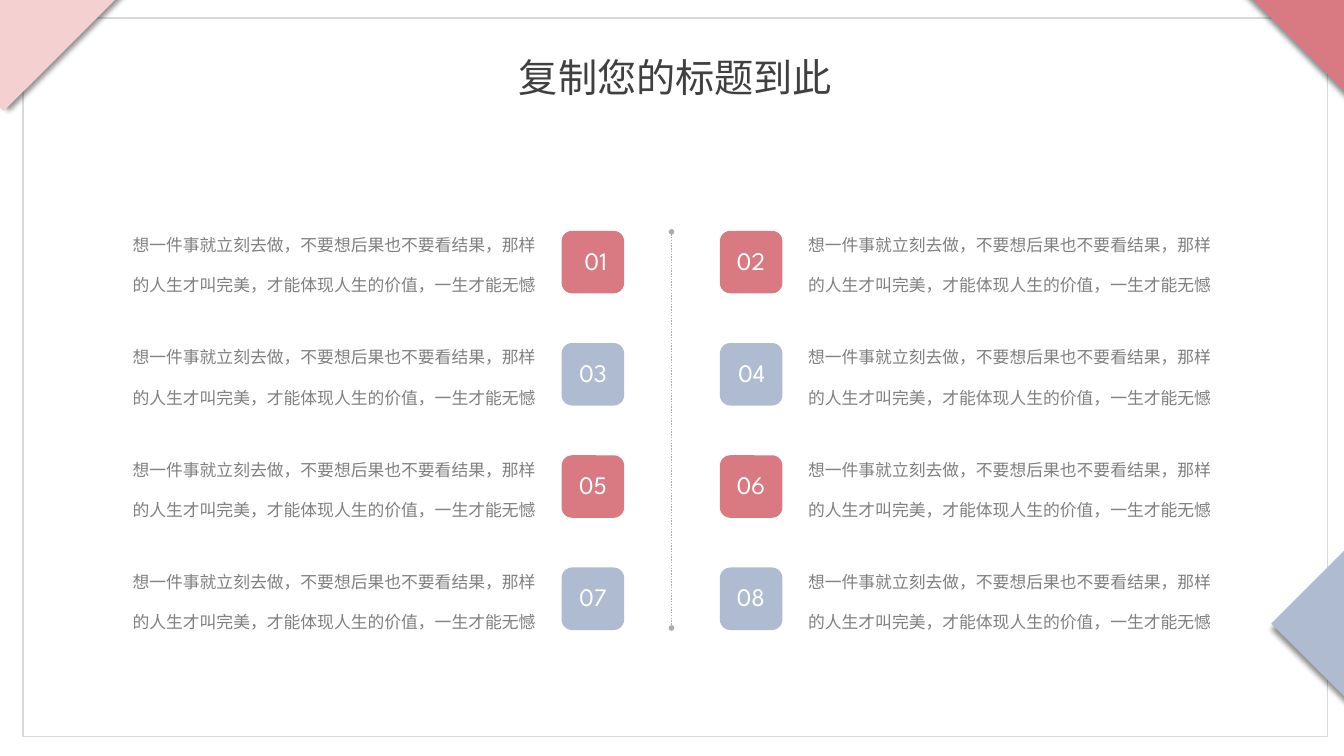
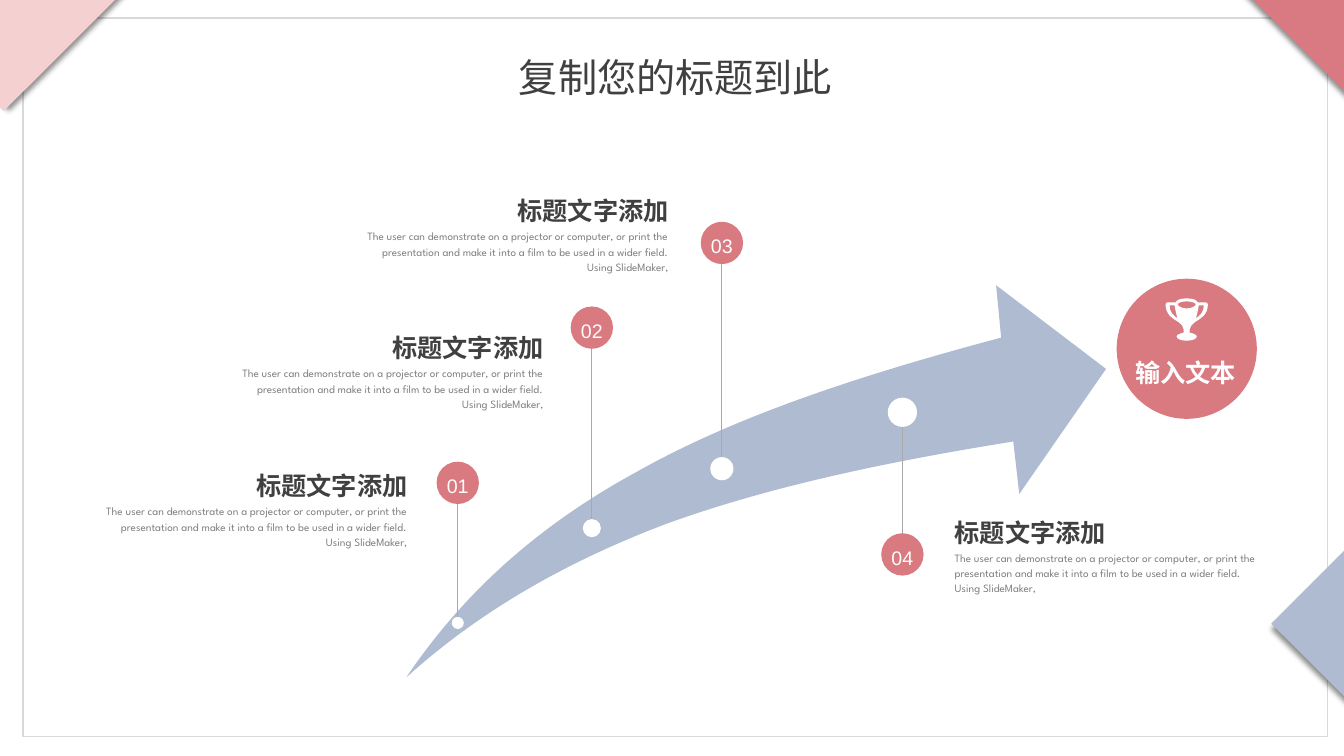
from dataclasses import dataclass

from lxml import etree
from pptx import Presentation
from pptx.dml.color import RGBColor
from pptx.enum.dml import MSO_LINE
from pptx.enum.shapes import MSO_CONNECTOR, MSO_SHAPE
from pptx.enum.text import MSO_ANCHOR, MSO_AUTO_SIZE, PP_ALIGN
from pptx.oxml.ns import qn
from pptx.util import Inches, Pt


@dataclass(frozen=True)
class Theme:
    white: str = "FFFFFF"
    number: str = "FCFCFC"
    frame: str = "D9D9D9"
    blush: str = "F4D0D1"
    rose: str = "D97A83"
    tile: str = "D97981"
    badge: str = "D97980"
    blue: str = "AEBBD0"
    heading: str = "404040"
    body: str = "808080"
    divider: str = "AFABAB"
    stem: str = "A6AAA9"
    chinese: str = "Noto Sans CJK SC"
    latin: str = "League Spartan"
    plain: str = "Arial"
    title_size: int = 28
    heading_size: int = 18
    number_size: int = 14
    body_size: int = 12
    caption_size: int = 8


THEME = Theme()
TITLE = "复制您的标题到此"
CORNERS = [
    ((-0.62, -0.48, 1.68, 1.16), THEME.blush, 0),
    ((12.74, -0.92, 0.9, 2.08), THEME.rose, 90),
    ((12.93, 5.47, 1.41, 1.49), THEME.blue, 90),
]

SENTENCE = "想一件事就立刻去做，不要想后果也不要看结果，那样的人生才叫完美，才能体现人生的价值，一生才能无憾"
ITEM_ROWS = [("01", "02"), ("03", "04"), ("05", "06"), ("07", "08")]
ITEM_COLUMNS = [(5.57, 1.16), (7.14, 7.86)]
FIRST_ROW_TOP, LAST_ROW_TOP = 2.29, 5.63
TILE_SIZE = 0.62

CALLOUT_HEADING = "标题文字添加"
CALLOUT_CAPTION = (
    "The user can demonstrate on a projector or computer, or print the presentation "
    "and make it into a film to be used in a wider field. Using SlideMaker,"
)
CALLOUTS = [
    {"number": "01", "x": 4.54, "badge_y": 4.79, "dot_y": 6.18, "dot": 0.12, "right": 4.14, "top": 4.56},
    {"number": "02", "x": 5.87, "badge_y": 3.25, "dot_y": 5.24, "dot": 0.18, "right": 5.49, "top": 3.19},
    {"number": "03", "x": 7.16, "badge_y": 2.41, "dot_y": 4.65, "dot": 0.23, "right": 6.73, "top": 1.83},
    {"number": "04", "x": 8.95, "badge_y": 5.5, "dot_y": 4.09, "dot": 0.29, "left": 9.37, "top": 5.02},
]
BADGE_SIZE = 0.42
GOAL_TEXT = "输入文本"

ARROW = [[
    (4.03, 6.72), (4.59, 5.89, 5.33, 5.22, 6.3, 4.69), (7.27, 4.14, 8.5, 3.73, 9.93, 3.35),
    (9.88, 2.83), (10.97, 3.66), (10.11, 4.9), (10.05, 4.38),
    (8.74, 4.59, 7.59, 4.84, 6.6, 5.2), (5.6, 5.58, 4.75, 6.07, 4.03, 6.72),
]]
TROPHY = [
    [(11.6, 3.03), (11.65, 3.03), (11.66, 3.09, 11.67, 3.13, 11.68, 3.16),
     (11.64, 3.13, 11.6, 3.1, 11.6, 3.03)],
    [(11.77, 2.99), (11.83, 2.99, 11.86, 3.01, 11.86, 3.02), (11.86, 3.03, 11.83, 3.06, 11.77, 3.06),
     (11.71, 3.06, 11.68, 3.03, 11.68, 3.02), (11.68, 3.01, 11.71, 2.99, 11.77, 2.99)],
    [(11.86, 3.16), (11.87, 3.13, 11.88, 3.09, 11.89, 3.03), (11.94, 3.03),
     (11.94, 3.1, 11.9, 3.13, 11.86, 3.16)],
    [(11.8, 3.27), (11.8, 3.24, 11.82, 3.22, 11.86, 3.19), (11.91, 3.16, 11.98, 3.12, 11.98, 3.02),
     (11.98, 3.01, 11.97, 3, 11.96, 3), (11.88, 3), (11.87, 2.98, 11.84, 2.96, 11.77, 2.96),
     (11.7, 2.96, 11.67, 2.98, 11.66, 3), (11.58, 3), (11.57, 3, 11.56, 3.01, 11.56, 3.02),
     (11.56, 3.12, 11.63, 3.16, 11.68, 3.19), (11.72, 3.22, 11.74, 3.24, 11.74, 3.27),
     (11.74, 3.3), (11.7, 3.31, 11.67, 3.32, 11.67, 3.34), (11.67, 3.36, 11.71, 3.38, 11.77, 3.38),
     (11.83, 3.38, 11.87, 3.36, 11.87, 3.34), (11.87, 3.32, 11.84, 3.31, 11.8, 3.3)],
]


def color(value):
    return RGBColor.from_string(value)


def write_text(shape, text, *, size, ink, font=THEME.chinese, bold=False, align=PP_ALIGN.CENTER,
               line_spacing=1.0, anchor=MSO_ANCHOR.TOP, insets=(0.1, 0.05, 0.1, 0.05), wrap=True):
    frame = shape.text_frame
    frame.auto_size = MSO_AUTO_SIZE.NONE
    frame.word_wrap = wrap
    frame.vertical_anchor = anchor
    frame.margin_left, frame.margin_top, frame.margin_right, frame.margin_bottom = map(Inches, insets)
    paragraph = frame.paragraphs[0]
    paragraph.alignment = align
    paragraph.line_spacing = line_spacing
    run = paragraph.add_run()
    run.text = text
    run.font.size = Pt(size)
    run.font.bold = bold
    run.font.color.rgb = color(ink)
    run.font.name = font
    etree.SubElement(run.font._element, qn("a:ea"), typeface=font)


def add_text(slide, box, text, **style):
    write_text(slide.shapes.add_textbox(*map(Inches, box)), text, **style)


def paint(shape, fill, outline=None):
    shape.shadow.inherit = False
    shape.fill.solid()
    shape.fill.fore_color.rgb = color(fill)
    if outline:
        shape.line.color.rgb = color(outline)
        shape.line.width = Pt(1)
    else:
        shape.line.fill.background()
    return shape


def add_block(slide, preset, box, fill, outline=None):
    return paint(slide.shapes.add_shape(preset, *map(Inches, box)), fill, outline)


def add_circle(slide, x, y, diameter, fill):
    box = (x - diameter / 2, y - diameter / 2, diameter, diameter)
    return add_block(slide, MSO_SHAPE.OVAL, box, fill)


def add_vertical_line(slide, x, top, bottom, ink, width):
    connector = slide.shapes.add_connector(
        MSO_CONNECTOR.STRAIGHT, Inches(x), Inches(top), Inches(x), Inches(bottom))
    connector.line.color.rgb = color(ink)
    connector.line.width = Pt(width)
    etree.SubElement(connector.element.spPr, qn("a:effectLst"))
    return connector


def add_drop_shadow(shape, direction):
    effects = shape.element.spPr.find(qn("a:effectLst"))
    shadow = etree.SubElement(
        effects, qn("a:outerShdw"), blurRad=str(Pt(4)), dist=str(Pt(4)),
        dir=str(direction * 60000), algn="ctr", rotWithShape="0")
    ink = etree.SubElement(shadow, qn("a:srgbClr"), val="000000")
    etree.SubElement(ink, qn("a:alpha"), val="44000")


def bend_segment(line_element, curve, shape):
    bezier = etree.Element(qn("a:cubicBezTo"))
    for x, y in zip(curve[0::2], curve[1::2]):
        etree.SubElement(bezier, qn("a:pt"), x=str(Inches(x) - shape.left), y=str(Inches(y) - shape.top))
    line_element.getparent().replace(line_element, bezier)


def add_outline(slide, contours, fill):
    ends = [[tuple(map(Inches, segment[-2:])) for segment in contour] for contour in contours]
    builder = slide.shapes.build_freeform(*ends[0][0], scale=1.0)
    for index, points in enumerate(ends):
        if index:
            builder.move_to(*points[0])
        builder.add_line_segments(points[1:], close=True)
    shape = builder.convert_to_shape()
    segments = [segment for contour in contours for segment in contour[1:]]
    for line_element, segment in zip(list(shape.element.iter(qn("a:lnTo"))), segments):
        if len(segment) == 6:
            bend_segment(line_element, segment, shape)
    return paint(shape, fill)


def decorate_layout(layout, slide):
    for placeholder in list(layout.placeholders):
        if placeholder.placeholder_format.idx != 0:
            layout.shapes.element.remove(placeholder.element)
    decorations = [add_block(slide, MSO_SHAPE.RECTANGLE, (0.23, 0.18, 12.94, 7.13),
                             THEME.white, THEME.frame)]
    for box, fill, direction in CORNERS:
        corner = add_block(slide, MSO_SHAPE.RECTANGLE, box, fill)
        corner.rotation = 315
        add_drop_shadow(corner, direction)
        decorations.append(corner)
    for shape in decorations:
        layout.shapes.element.append(shape.element)


def add_titled_slide(presentation, layout):
    slide = presentation.slides.add_slide(layout)
    title = slide.shapes.title
    title.left, title.top, title.width, title.height = map(Inches, (5.03, 0.48, 3.34, 0.57))
    write_text(title, TITLE, size=THEME.title_size, ink=THEME.heading,
               anchor=MSO_ANCHOR.MIDDLE, wrap=False)
    return slide


def fill_item_slide(slide):
    divider = add_vertical_line(slide, 6.66, 2.3, 6.23, THEME.divider, 1)
    divider.line.dash_style = MSO_LINE.ROUND_DOT
    for end in ("a:headEnd", "a:tailEnd"):
        etree.SubElement(divider.element.spPr.find(qn("a:ln")), qn(end), type="oval", w="sm", len="sm")
    pitch = (LAST_ROW_TOP - FIRST_ROW_TOP) / (len(ITEM_ROWS) - 1)
    for row, numbers in enumerate(ITEM_ROWS):
        top = FIRST_ROW_TOP + row * pitch
        fill = THEME.blue if row % 2 else THEME.tile
        for number, (tile_left, text_left) in zip(numbers, ITEM_COLUMNS):
            tile = add_block(slide, MSO_SHAPE.ROUNDED_RECTANGLE,
                             (tile_left, top, TILE_SIZE, TILE_SIZE), fill)
            write_text(tile, number, size=THEME.heading_size, ink=THEME.white, font=THEME.latin,
                       align=PP_ALIGN.RIGHT, anchor=MSO_ANCHOR.MIDDLE,
                       insets=(0, 0, 0.14, 0.04), wrap=False)
            add_text(slide, (text_left, top - 0.21, 4.31, 0.85), SENTENCE,
                     size=THEME.body_size, ink=THEME.body, line_spacing=2.0)


def add_callout(slide, callout):
    x, badge_y, dot_y = callout["x"], callout["badge_y"], callout["dot_y"]
    add_vertical_line(slide, x, min(badge_y, dot_y), max(badge_y, dot_y), THEME.stem, 0.75)
    add_circle(slide, x, dot_y, callout["dot"], THEME.white)
    badge = add_circle(slide, x, badge_y, BADGE_SIZE, THEME.badge)
    write_text(badge, callout["number"], size=THEME.number_size, ink=THEME.number, font=THEME.plain,
               line_spacing=1.2, anchor=MSO_ANCHOR.MIDDLE, insets=(0, 0.01, 0, 0), wrap=False)
    align = PP_ALIGN.LEFT if "left" in callout else PP_ALIGN.RIGHT

    def place(offset, width, height):
        left = callout["left"] if "left" in callout else callout["right"] - width
        return left, callout["top"] + offset, width, height

    add_text(slide, place(0, 2.74, 0.44), CALLOUT_HEADING, size=THEME.heading_size,
             ink=THEME.heading, bold=True, align=align, line_spacing=1.2)
    add_text(slide, place(0.38, 3.24, 0.56), CALLOUT_CAPTION, size=THEME.caption_size,
             ink=THEME.body, font=THEME.latin, align=align, line_spacing=1.14)


def fill_arrow_slide(slide):
    add_outline(slide, ARROW, THEME.blue)
    for callout in CALLOUTS:
        add_callout(slide, callout)
    add_circle(slide, 11.77, 3.46, 1.39, THEME.badge)
    add_outline(slide, TROPHY, THEME.white)
    add_text(slide, (11.25, 3.44, 1.02, 0.41), GOAL_TEXT, size=THEME.heading_size, ink=THEME.white,
             bold=True, line_spacing=1.3, anchor=MSO_ANCHOR.MIDDLE, insets=(0, 0, 0, 0), wrap=False)


def main():
    presentation = Presentation()
    presentation.slide_width, presentation.slide_height = Inches(13.33), Inches(7.5)
    layout = presentation.slide_layouts[5]
    item_slide = add_titled_slide(presentation, layout)
    decorate_layout(layout, item_slide)
    fill_item_slide(item_slide)
    fill_arrow_slide(add_titled_slide(presentation, layout))
    presentation.save("out.pptx")


if __name__ == "__main__":
    main()
